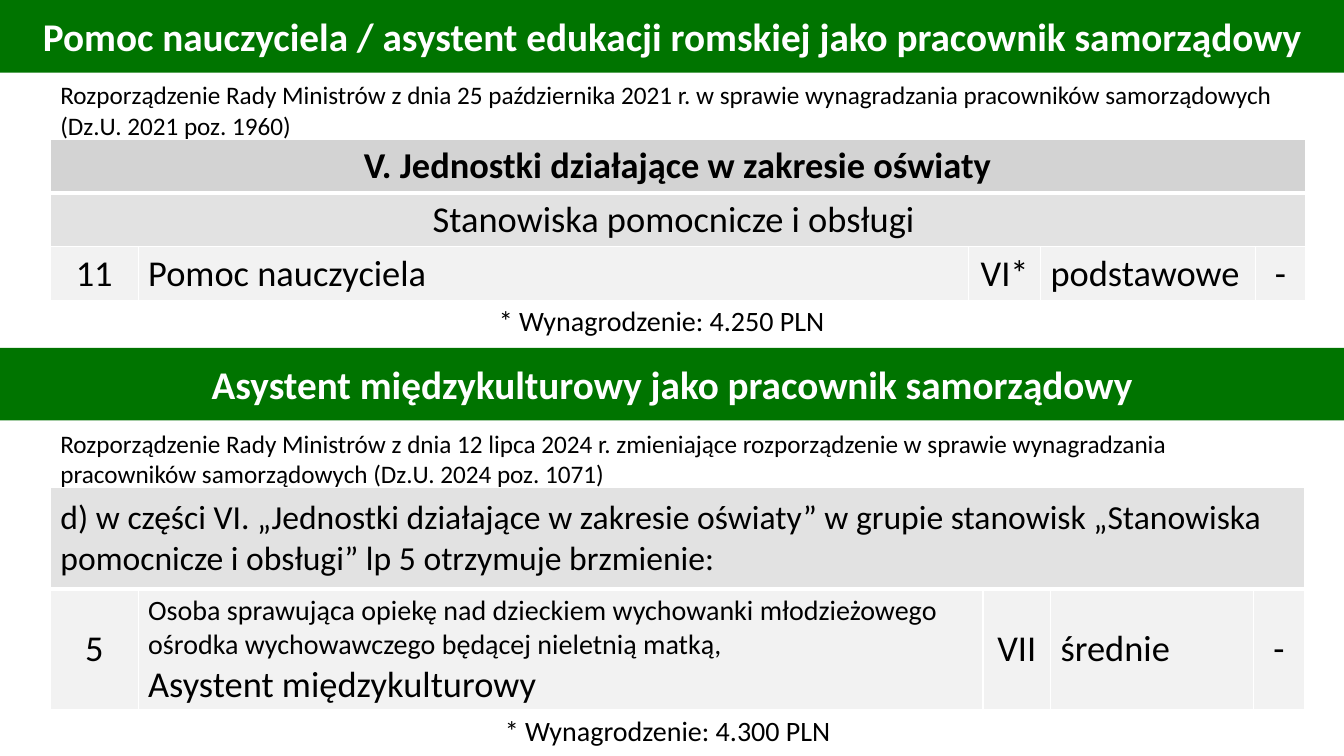
from dataclasses import dataclass

from lxml import etree
from pptx import Presentation
from pptx.dml.color import RGBColor
from pptx.enum.shapes import MSO_SHAPE
from pptx.enum.text import MSO_ANCHOR, PP_ALIGN
from pptx.oxml.ns import qn
from pptx.util import Inches, Pt

RECTANGLE = MSO_SHAPE.RECTANGLE
TOP, MIDDLE = MSO_ANCHOR.TOP, MSO_ANCHOR.MIDDLE
LEFT, CENTER = PP_ALIGN.LEFT, PP_ALIGN.CENTER


@dataclass(frozen=True)
class Theme:
    font: str = "Calibri"
    banner: str = "007400"
    white: str = "FFFFFF"
    text: str = "000000"
    heading_fill: str = "D3D3D3"
    group_fill: str = "E2E2E2"
    row_fill: str = "F2F2F2"
    title_size: int = 28
    position_size: int = 26
    clause_size: int = 24
    note_size: int = 20
    source_size: int = 18
    thin: int = 1
    thick: int = 3


THEME = Theme()
SLIDE_WIDTH, SLIDE_HEIGHT = 13.33, 7.5
MARGIN, CONTENT_WIDTH = 0.5, 12.45
POSITION_ALIGNMENTS = (CENTER, LEFT, CENTER, LEFT, CENTER)


def write(paragraph, text, size, color=THEME.text, bold=False, alignment=LEFT):
    paragraph.alignment = alignment
    run = paragraph.add_run()
    run.text = text
    run.font.name = THEME.font
    run.font.size = Pt(size)
    run.font.bold = bold
    run.font.color.rgb = RGBColor.from_string(color)


def add_banner(slide, top, text):
    shape = slide.shapes.add_shape(
        RECTANGLE, 0, Inches(top), Inches(SLIDE_WIDTH), Inches(0.72))
    shape.shadow.inherit = False
    shape.fill.solid()
    shape.fill.fore_color.rgb = RGBColor.from_string(THEME.banner)
    shape.line.fill.background()
    frame = shape.text_frame
    frame.word_wrap = True
    frame.vertical_anchor = MIDDLE
    write(frame.paragraphs[0], text, THEME.title_size, THEME.white, True, CENTER)


def add_text(slide, left, top, width, height, text, size):
    box = slide.shapes.add_textbox(
        Inches(left), Inches(top), Inches(width), Inches(height))
    box.text_frame.word_wrap = True
    write(box.text_frame.paragraphs[0], text, size)


def set_borders(cell, top_width, bottom_width):
    properties = cell._tc.get_or_add_tcPr()
    widths = (("a:lnL", THEME.thin), ("a:lnR", THEME.thin),
              ("a:lnT", top_width), ("a:lnB", bottom_width))
    for index, (tag, width) in enumerate(widths):
        line = etree.Element(qn(tag), w=str(Pt(width)))
        fill = etree.SubElement(line, qn("a:solidFill"))
        etree.SubElement(fill, qn("a:srgbClr"), val=THEME.white)
        properties.insert(index, line)


def add_position_table(slide, top, columns, heights, headings, position, anchor):
    row_count = len(headings) + 1
    table = slide.shapes.add_table(
        row_count, len(columns), Inches(MARGIN), Inches(top),
        Inches(CONTENT_WIDTH), Inches(sum(heights))).table
    for column, width in zip(table.columns, columns):
        column.width = Inches(width)
    for row, height in zip(table.rows, heights):
        row.height = Inches(height)

    fills = [fill for _, _, _, _, fill in headings] + [THEME.row_fill]
    for row_index, fill in enumerate(fills):
        for column_index in range(len(columns)):
            cell = table.cell(row_index, column_index)
            cell.fill.solid()
            cell.fill.fore_color.rgb = RGBColor.from_string(fill)
            cell.vertical_anchor = anchor
            set_borders(cell,
                        THEME.thick if row_index == 1 else THEME.thin,
                        THEME.thick if row_index == 0 else THEME.thin)

    for row_index, (text, size, bold, alignment, _) in enumerate(headings):
        cell = table.cell(row_index, 0)
        cell.merge(table.cell(row_index, len(columns) - 1))
        write(cell.text_frame.paragraphs[0], text, size, bold=bold, alignment=alignment)

    for column_index, lines in enumerate(position):
        frame = table.cell(row_count - 1, column_index).text_frame
        for line_index, (text, size) in enumerate(lines):
            paragraph = frame.add_paragraph() if line_index else frame.paragraphs[0]
            write(paragraph, text, size, alignment=POSITION_ALIGNMENTS[column_index])


def entry(text):
    return [(text, THEME.position_size)]


def add_section(slide, top, title, source, source_top, note, note_left, note_top, table):
    add_banner(slide, top, title)
    add_text(slide, MARGIN, source_top, CONTENT_WIDTH, 0.71, source, THEME.source_size)
    add_position_table(slide, **table)
    add_text(slide, note_left, note_top, 3.51, 0.44, note, THEME.note_size)


def build_salary_slide(presentation):
    slide = presentation.slides.add_slide(presentation.slide_layouts[6])
    add_section(
        slide, 0,
        "Pomoc nauczyciela / asystent edukacji romskiej jako pracownik samorządowy",
        "Rozporządzenie Rady Ministrów z dnia 25 października 2021 r. w sprawie "
        "wynagradzania pracowników samorządowych (Dz.U. 2021 poz. 1960)", 0.74,
        "* Wynagrodzenie: 4.250 PLN", 4.85, 2.96,
        dict(top=1.38, columns=(0.87, 8.24, 0.71, 2.13, 0.5), heights=(0.53,) * 3,
             headings=[
                 ("V. Jednostki działające w zakresie oświaty",
                  THEME.position_size, True, CENTER, THEME.heading_fill),
                 ("Stanowiska pomocnicze i obsługi ",
                  THEME.position_size, False, CENTER, THEME.group_fill)],
             position=[entry(text) for text in
                       ("11", "Pomoc nauczyciela", "VI*", "podstawowe", "-")],
             anchor=TOP))
    add_section(
        slide, 3.45,
        "Asystent międzykulturowy jako pracownik samorządowy",
        "Rozporządzenie Rady Ministrów z dnia 12 lipca 2024 r. zmieniające "
        "rozporządzenie w sprawie wynagradzania pracowników samorządowych "
        "(Dz.U. 2024 poz. 1071)", 4.2,
        "* Wynagrodzenie: 4.300 PLN", 4.91, 7.03,
        dict(top=4.84, columns=(0.87, 8.38, 0.67, 2.01, 0.51), heights=(1, 1.2),
             headings=[
                 ("d) w części VI. „Jednostki działające w zakresie oświaty” w grupie "
                  "stanowisk „Stanowiska pomocnicze i obsługi” lp 5 otrzymuje brzmienie:",
                  THEME.clause_size, False, LEFT, THEME.group_fill)],
             position=[
                 entry("5"),
                 [("Osoba sprawująca opiekę nad dzieckiem wychowanki młodzieżowego "
                   "ośrodka wychowawczego będącej nieletnią matką,", THEME.note_size),
                  *entry("Asystent międzykulturowy")],
                 entry("VII"), entry("średnie"), entry("-")],
             anchor=MIDDLE))


def main():
    presentation = Presentation()
    presentation.slide_width = Inches(SLIDE_WIDTH)
    presentation.slide_height = Inches(SLIDE_HEIGHT)
    build_salary_slide(presentation)
    presentation.save("out.pptx")


if __name__ == "__main__":
    main()
